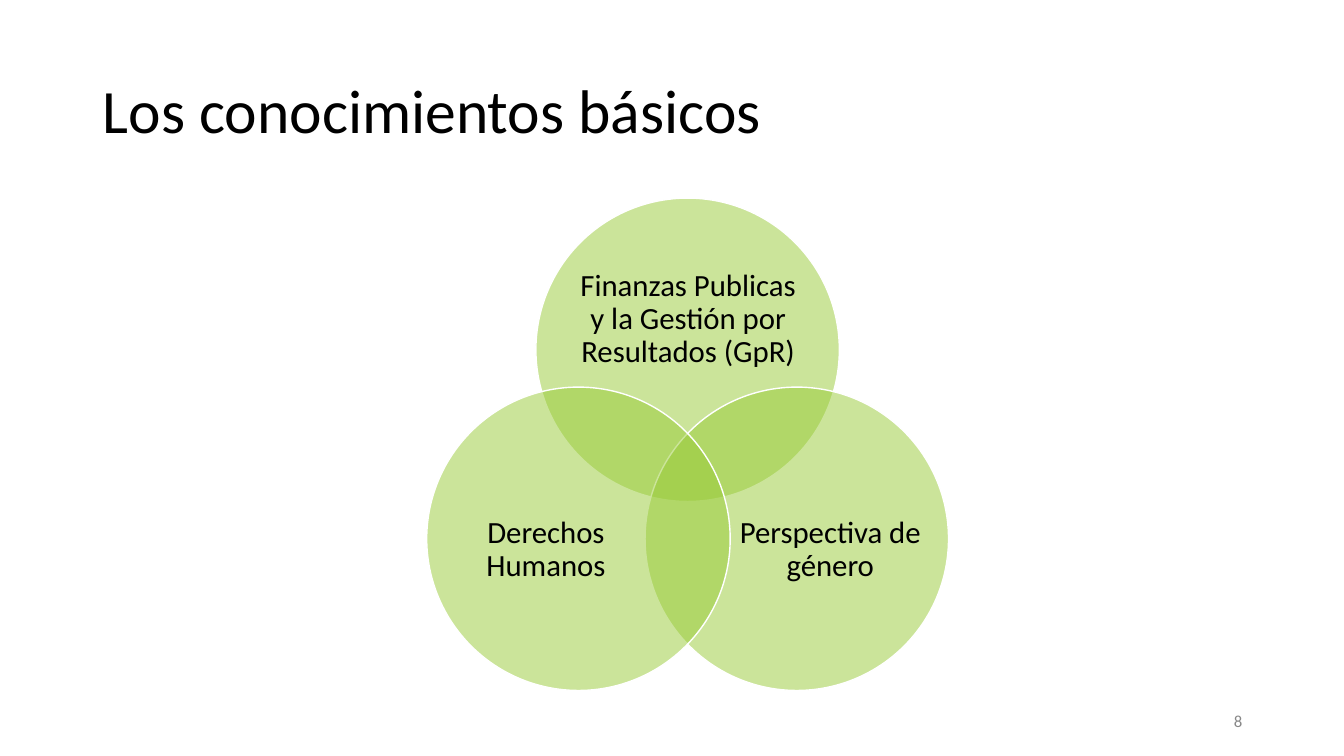
"""Build a slide with a three-circle Venn diagram of basic knowledge areas."""
from math import cos, radians, sin

from lxml.etree import SubElement
from pptx import Presentation
from pptx.dml.color import RGBColor
from pptx.enum.shapes import MSO_SHAPE
from pptx.enum.text import MSO_ANCHOR, MSO_AUTO_SIZE, PP_ALIGN
from pptx.oxml.ns import qn
from pptx.util import Pt

HEADING = "Los conocimientos básicos"
PAGE_NUMBER = "8"
AREAS = [
    {"label": "Finanzas Publicas y la Gestión por Resultados (GpR)",
     "angle": -90, "box": (572, 249, 221, 136)},
    {"label": "Perspectiva de género", "angle": 30, "box": (733, 463, 181, 166)},
    {"label": "Derechos Humanos", "angle": 150, "box": (451, 463, 181, 166)},
]
COLORS = {"text": "000000", "number": "888888", "circle": "98CB37", "outline": "FFFFFF"}
FONT = "Calibri"
CENTER_X, CENTER_Y = 682, 472
SPREAD = 125
DIAMETER = 301
OPACITY = 50
EMU_PER_PX = 9144


def px(*lengths):
    return [round(length * EMU_PER_PX) for length in lengths]


def color(name):
    return RGBColor.from_string(COLORS[name])


def write(frame, text, size=22, tone="text", align=PP_ALIGN.CENTER, spacing=0.9, inset=(0, 0)):
    frame.word_wrap = True
    frame.auto_size = MSO_AUTO_SIZE.NONE
    frame.vertical_anchor = MSO_ANCHOR.MIDDLE
    frame.margin_left = frame.margin_right = px(inset[0])[0]
    frame.margin_top = frame.margin_bottom = px(inset[1])[0]
    paragraph = frame.paragraphs[0]
    paragraph.alignment = align
    paragraph.line_spacing = spacing
    run = paragraph.add_run()
    run.text = text
    run.font.name = FONT
    run.font.size = Pt(size)
    run.font.color.rgb = color(tone)


def add_circle(slide, angle):
    left = CENTER_X + SPREAD * cos(radians(angle)) - DIAMETER / 2
    top = CENTER_Y + SPREAD * sin(radians(angle)) - DIAMETER / 2
    circle = slide.shapes.add_shape(MSO_SHAPE.OVAL, *px(left, top, DIAMETER, DIAMETER))
    circle.shadow.inherit = False
    circle.fill.solid()
    circle.fill.fore_color.rgb = color("circle")
    tint = circle.fill._xPr.find(qn("a:solidFill"))[0]
    SubElement(tint, qn("a:alpha"), val=str(OPACITY * 1000))
    circle.line.color.rgb = color("outline")
    circle.line.width = Pt(1)


def main():
    deck = Presentation()
    deck.slide_width, deck.slide_height = px(1333, 750)
    slide = deck.slides.add_slide(deck.slide_layouts[5])

    heading = slide.shapes.title
    heading.left, heading.top, heading.width, heading.height = px(92, 40, 1150, 145)
    write(heading.text_frame, HEADING, size=44, align=PP_ALIGN.LEFT, inset=(10, 5))

    number = slide.shapes.add_textbox(*px(942, 695, 300, 40))
    write(number.text_frame, PAGE_NUMBER, size=12, tone="number",
          align=PP_ALIGN.RIGHT, spacing=1.0, inset=(10, 5))

    for area in AREAS:
        add_circle(slide, area["angle"])
        label = slide.shapes.add_textbox(*px(*area["box"]))
        write(label.text_frame, area["label"])

    deck.save("out.pptx")


if __name__ == "__main__":
    main()
